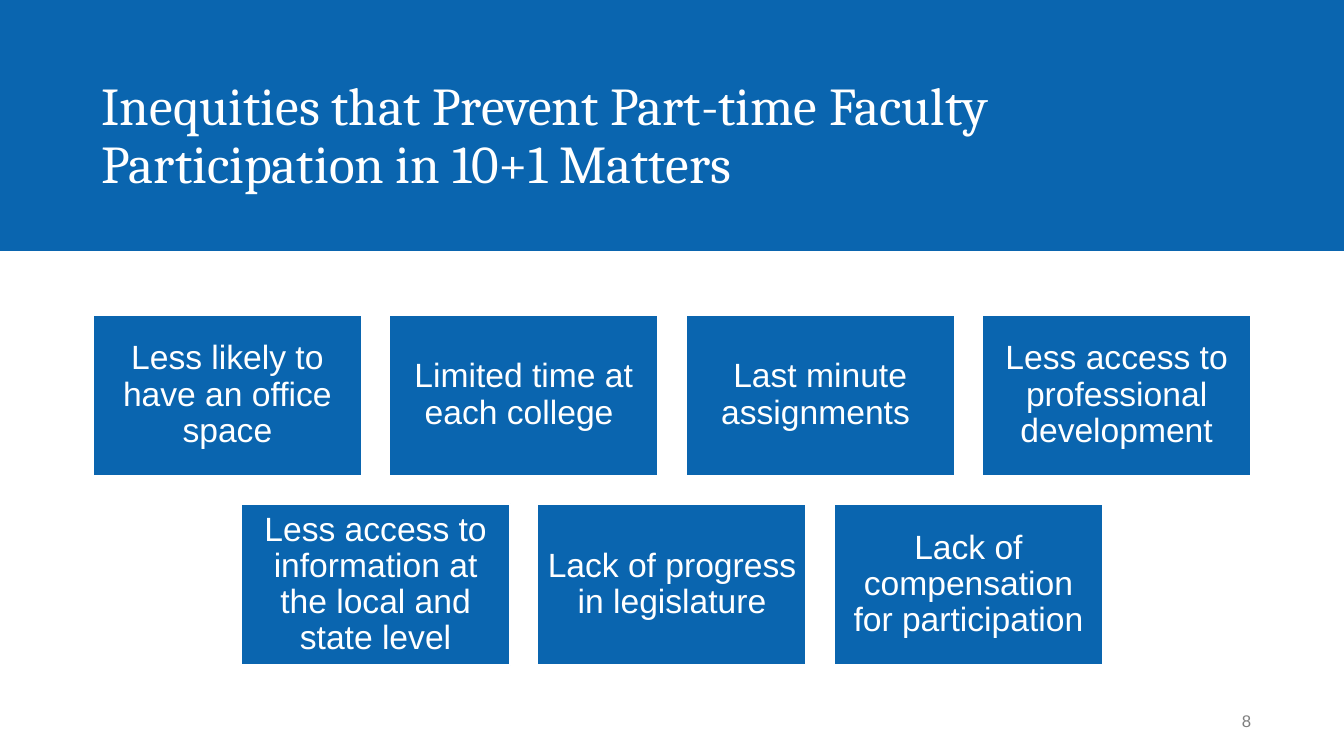
from dataclasses import dataclass

from pptx import Presentation, util as u
from pptx.dml.color import RGBColor
from pptx.enum import shapes, text
from pptx.shapes.autoshape import Shape
from pptx.slide import Slide

EMU_PER_PX = 9144  # 100 px to the inch


@dataclass(frozen=True)
class Theme:
    blue: RGBColor = RGBColor(0x0A, 0x65, 0xAF)
    white: RGBColor = RGBColor(0xFF, 0xFF, 0xFF)
    grey: RGBColor = RGBColor(0x7F, 0x7F, 0x7F)
    heading_font: str = "Cambria"
    body_font: str = "Arial"
    title_size: int = 38
    card_size: int = 24
    number_size: int = 12


@dataclass(frozen=True)
class Box:
    left: int
    top: int
    width: int
    height: int


@dataclass(frozen=True)
class Label:
    words: str
    font: str
    size: int
    color: RGBColor
    align: text.PP_ALIGN = text.PP_ALIGN.LEFT
    line_spacing: float = 0.9
    insets: tuple[int, int, int, int] = (10, 5, 10, 5)  # left, top, right, bottom


@dataclass(frozen=True)
class CardRow:
    top: int
    texts: tuple[str, ...]


THEME = Theme()
SLIDE_WIDTH, SLIDE_HEIGHT = 1333, 750
CARD_WIDTH, CARD_HEIGHT, CARD_GAP = 267, 160, 27
CARD_ROWS = (
    CardRow(312, (
        "Less likely to have an office space",
        "Limited time at each college ",
        "Last minute assignments ",
        "Less access to professional development",
    )),
    CardRow(500, (
        "Less access to information at the local and state level",
        "Lack of progress in legislature",
        "Lack of compensation for participation",
    )),
)


def px(length: int) -> u.Emu:
    return u.Emu(length * EMU_PER_PX)


def edges(box: Box) -> tuple[u.Emu, ...]:
    return px(box.left), px(box.top), px(box.width), px(box.height)


def write(shape: Shape, label: Label) -> None:
    frame = shape.text_frame
    frame.word_wrap = True
    frame.vertical_anchor = text.MSO_ANCHOR.MIDDLE
    (frame.margin_left, frame.margin_top,
     frame.margin_right, frame.margin_bottom) = map(px, label.insets)
    paragraph = frame.paragraphs[0]
    paragraph.alignment = label.align
    paragraph.line_spacing = label.line_spacing
    run = paragraph.add_run()
    run.text = label.words
    run.font.name = label.font
    run.font.size = u.Pt(label.size)
    run.font.color.rgb = label.color


def add_text(slide: Slide, box: Box, label: Label) -> None:
    write(slide.shapes.add_textbox(*edges(box)), label)


def add_rectangle(slide: Slide, box: Box) -> Shape:
    shape = slide.shapes.add_shape(shapes.MSO_SHAPE.RECTANGLE, *edges(box))
    shape.shadow.inherit = False
    shape.fill.solid()
    shape.fill.fore_color.rgb = THEME.blue
    shape.line.fill.background()
    return shape


def add_card(slide: Slide, box: Box, words: str) -> None:
    card = add_rectangle(slide, box)
    card.line.color.rgb = THEME.white
    card.line.width = u.Pt(1.5)
    write(card, Label(words, THEME.body_font, THEME.card_size, THEME.white,
                      text.PP_ALIGN.CENTER, insets=(9, 10, 9, 10)))


def add_card_row(slide: Slide, row: CardRow) -> None:
    pitch = CARD_WIDTH + CARD_GAP
    left = (SLIDE_WIDTH - len(row.texts) * pitch + CARD_GAP) // 2
    for index, words in enumerate(row.texts):
        add_card(slide, Box(left + index * pitch, row.top, CARD_WIDTH, CARD_HEIGHT), words)


def main() -> None:
    presentation = Presentation()
    presentation.slide_width = px(SLIDE_WIDTH)
    presentation.slide_height = px(SLIDE_HEIGHT)
    slide = presentation.slides.add_slide(presentation.slide_layouts[6])

    # Title band
    add_rectangle(slide, Box(0, 0, SLIDE_WIDTH, 249))
    add_text(slide, Box(91, 44, 1151, 184), Label(
        "Inequities that Prevent Part-time Faculty Participation in 10+1 Matters",
        THEME.heading_font, THEME.title_size, THEME.white))

    # Slide number
    add_text(slide, Box(1141, 695, 100, 40), Label(
        "8", THEME.body_font, THEME.number_size, THEME.grey,
        text.PP_ALIGN.RIGHT, line_spacing=1.0, insets=(10, 5, 0, 5)))

    # Centred rows of inequities
    for row in CARD_ROWS:
        add_card_row(slide, row)

    presentation.save("out.pptx")


if __name__ == "__main__":
    main()
